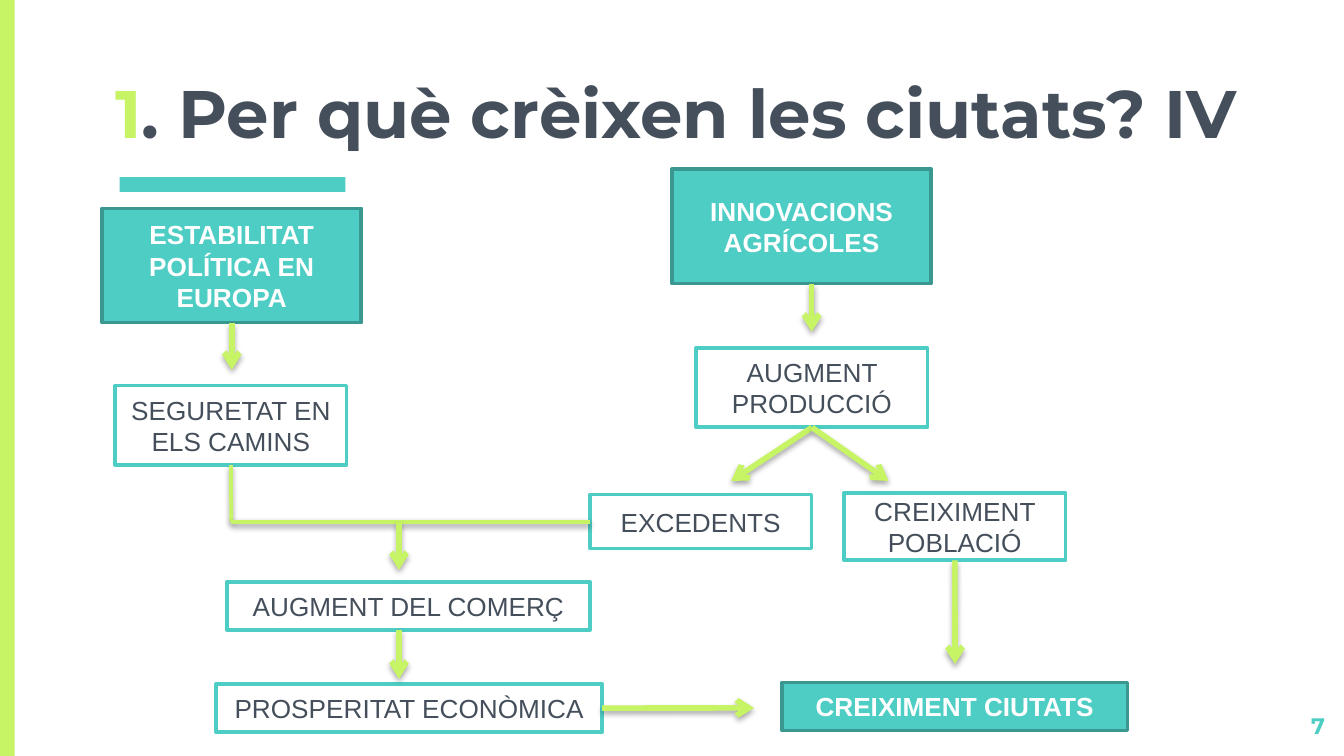
from dataclasses import dataclass
from typing import Optional

import pptx
import pptx.dml.color
import pptx.enum.shapes
import pptx.enum.text
import pptx.oxml
import pptx.oxml.ns
import pptx.util

Cm, Pt = pptx.util.Cm, pptx.util.Pt
ALIGN, ANCHOR = pptx.enum.text.PP_ALIGN, pptx.enum.text.MSO_ANCHOR
RECTANGLE = pptx.enum.shapes.MSO_SHAPE.RECTANGLE
STRAIGHT = pptx.enum.shapes.MSO_CONNECTOR.STRAIGHT

LIME, TEAL, DARK_TEAL = "C7F464", "4ECDC4", "3A9891"
SLATE, WHITE = "454F5B", "FFFFFF"
BOTTOM, LEFT, RIGHT = 2, 1, 3


@dataclass
class Box:
    text: str
    left: float
    top: float
    width: float
    height: float
    key: bool = False  # filled teal with bold white text


@dataclass
class Link:
    """Line to `end`, from a side of a box or from a free point."""
    end: tuple[float, float]
    box: str = ""
    side: int = BOTTOM
    start: Optional[tuple[float, float]] = None
    arrow: bool = True


BOXES = {
    "stability": Box("ESTABILITAT POLÍTICA EN EUROPA", 1.93, 3.94, 4.9, 2.16, True),
    "innovation": Box("INNOVACIONS AGRÍCOLES", 12.7, 3.2, 4.9, 2.16, True),
    "safety": Box("SEGURETAT EN ELS CAMINS", 2.18, 7.29, 4.37, 1.5),
    "production": Box("AUGMENT PRODUCCIÓ", 13.16, 6.58, 4.37, 1.5),
    "surplus": Box("EXCEDENTS", 11.15, 9.35, 4.19, 1.02),
    "population": Box("CREIXIMENT POBLACIÓ", 15.95, 9.32, 4.19, 1.27),
    "trade": Box("AUGMENT DEL COMERÇ", 4.29, 11, 6.86, 0.91),
    "prosperity": Box("PROSPERITAT ECONÒMICA", 4.09, 12.93, 7.29, 0.91),
    "cities": Box("CREIXIMENT CIUTATS", 14.78, 12.9, 6.53, 0.91, True),
}

JUNCTION = (4.37, 9.86)  # where safety and surplus meet
LINKS = [
    Link((4.38, 6.99), "stability"),
    Link((15.34, 6.27), start=(15.34, 5.36)),
    Link((13.82, 9.09), "production"),
    Link((16.79, 9.09), "production"),
    Link(JUNCTION, "safety", arrow=False),
    Link(JUNCTION, "surplus", LEFT, arrow=False),
    Link((7.54, 10.77), start=(7.54, 9.86)),
    Link((7.54, 12.83), start=(7.54, 11.91)),
    Link((14.25, 13.38), "prosperity", RIGHT),
    Link((18.05, 12.55), "population"),
]


def rgb(color: str) -> pptx.dml.color.RGBColor:
    return pptx.dml.color.RGBColor.from_string(color)


def add_run(paragraph, text: str, size: float, font: str, color: str, bold: bool) -> None:
    run = paragraph.add_run()
    run.text = text
    run.font.size, run.font.name, run.font.bold = Pt(size), font, bold
    run.font.color.rgb = rgb(color)


def set_frame(frame, anchor) -> None:
    """Wrap the text, keep its size and use even margins."""
    frame.word_wrap = True
    frame.auto_size = pptx.enum.text.MSO_AUTO_SIZE.NONE
    frame.vertical_anchor = anchor
    frame.margin_left = frame.margin_right = Cm(0.25)
    frame.margin_top = frame.margin_bottom = Cm(0.25)


def add_rectangle(slide, left: float, top: float, width: float, height: float, fill: str):
    rectangle = slide.shapes.add_shape(RECTANGLE, Cm(left), Cm(top), Cm(width), Cm(height))
    rectangle.shadow.inherit = False
    rectangle.fill.solid()
    rectangle.fill.fore_color.rgb = rgb(fill)
    rectangle.line.fill.background()
    return rectangle


def add_box(slide, box: Box):
    rectangle = add_rectangle(slide, box.left, box.top, box.width, box.height,
                              TEAL if box.key else WHITE)
    rectangle.line.color.rgb = rgb(DARK_TEAL if box.key else TEAL)
    rectangle.line.width = Pt(2)
    frame = rectangle.text_frame
    frame.word_wrap = True
    frame.vertical_anchor = ANCHOR.MIDDLE
    paragraph = frame.paragraphs[0]
    paragraph.alignment = ALIGN.CENTER
    add_run(paragraph, box.text, 14, "Arial", WHITE if box.key else SLATE, box.key)
    return rectangle


def add_link(slide, link: Link, drawn: dict) -> None:
    end = [Cm(value) for value in link.end]
    start = [Cm(value) for value in link.start or link.end]
    connector = slide.shapes.add_connector(STRAIGHT, *start, *end)
    if link.box:
        connector.begin_connect(drawn[link.box], link.side)
    connector.line.color.rgb = rgb(LIME)
    connector.line.width = Pt(3 if link.arrow else 2)
    if link.arrow:
        line = connector.line._get_or_add_ln()
        line.append(pptx.oxml.parse_xml(
            f'<a:tailEnd {pptx.oxml.ns.nsdecls("a")} type="arrow"/>'))
    distance, alpha = (1.8, 35) if link.arrow else (1.6, 38)
    connector._element.spPr.append(pptx.oxml.parse_xml(
        f'<a:effectLst {pptx.oxml.ns.nsdecls("a")}>'
        f'<a:outerShdw blurRad="{Pt(3.1)}" dist="{Pt(distance)}" dir="5400000" rotWithShape="0">'
        f'<a:srgbClr val="000000"><a:alpha val="{alpha * 1000}"/></a:srgbClr>'
        '</a:outerShdw></a:effectLst>'))


def add_title(slide) -> None:
    title = slide.shapes.title
    title.left, title.top, title.width, title.height = Cm(1.93), Cm(0.71), Cm(23.06), Cm(2.41)
    set_frame(title.text_frame, ANCHOR.BOTTOM)
    paragraph = title.text_frame.paragraphs[0]
    paragraph.alignment = ALIGN.LEFT
    add_run(paragraph, "1", 36, "Montserrat", LIME, True)
    add_run(paragraph, ". Per què crèixen les ciutats? IV", 36, "Montserrat", SLATE, True)


def add_page_number(slide) -> None:
    number = slide.shapes.add_textbox(Cm(23.77), Cm(13.21), Cm(1.52), Cm(0.86))
    set_frame(number.text_frame, ANCHOR.TOP)
    paragraph = number.text_frame.paragraphs[0]
    paragraph.alignment = ALIGN.RIGHT
    add_run(paragraph, "7", 12, "Montserrat", TEAL, True)


def main() -> None:
    deck = pptx.Presentation()
    deck.slide_width, deck.slide_height = Cm(25.4), Cm(14.29)
    slide = deck.slides.add_slide(deck.slide_layouts.get_by_name("Title Only"))
    add_rectangle(slide, 0, 0, 0.28, 14.29, LIME)
    add_rectangle(slide, 2.26, 3.35, 4.27, 0.28, TEAL)
    add_title(slide)
    add_page_number(slide)
    drawn = {name: add_box(slide, box) for name, box in BOXES.items()}
    for link in LINKS:
        add_link(slide, link, drawn)
    deck.save("out.pptx")


if __name__ == "__main__":
    main()
